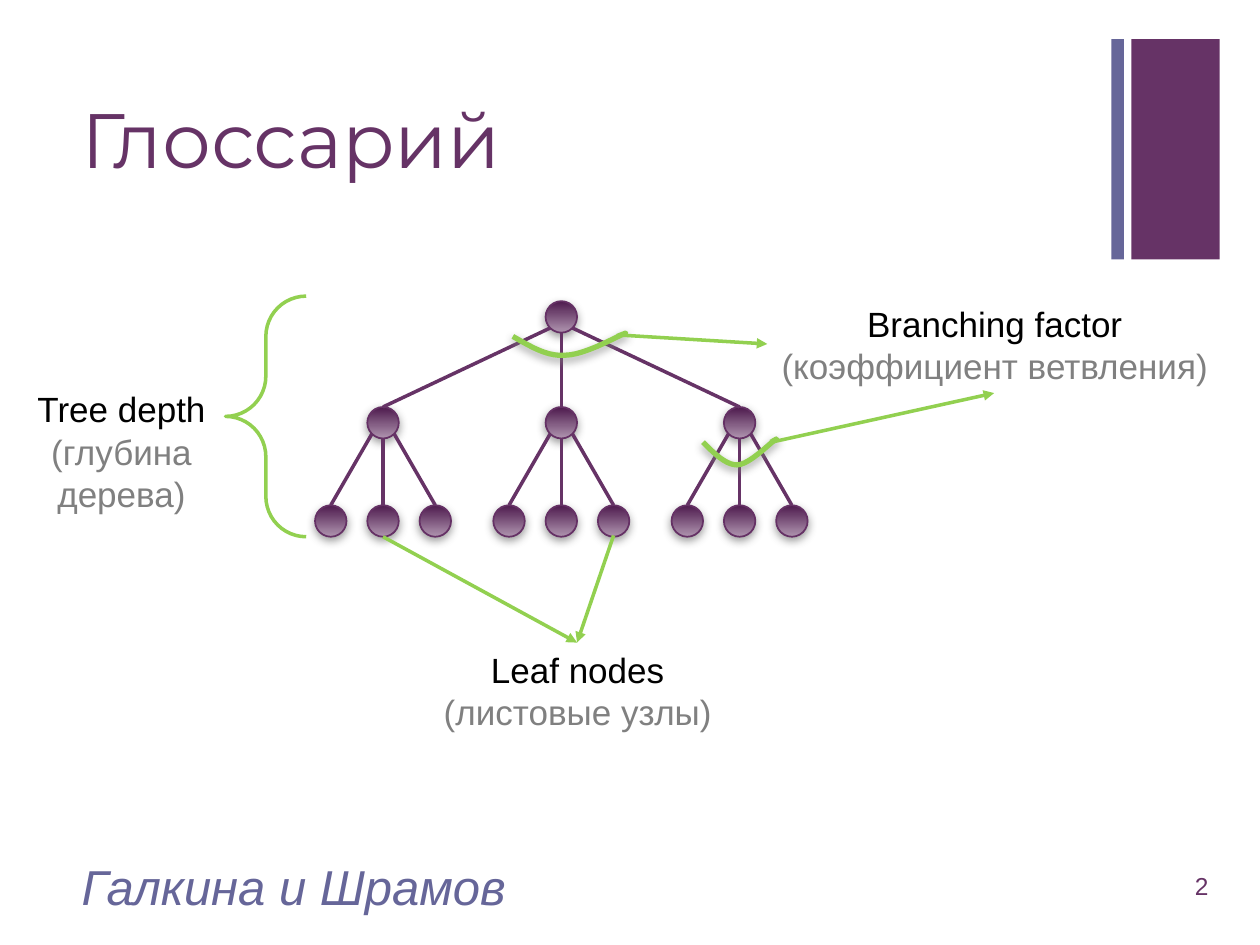
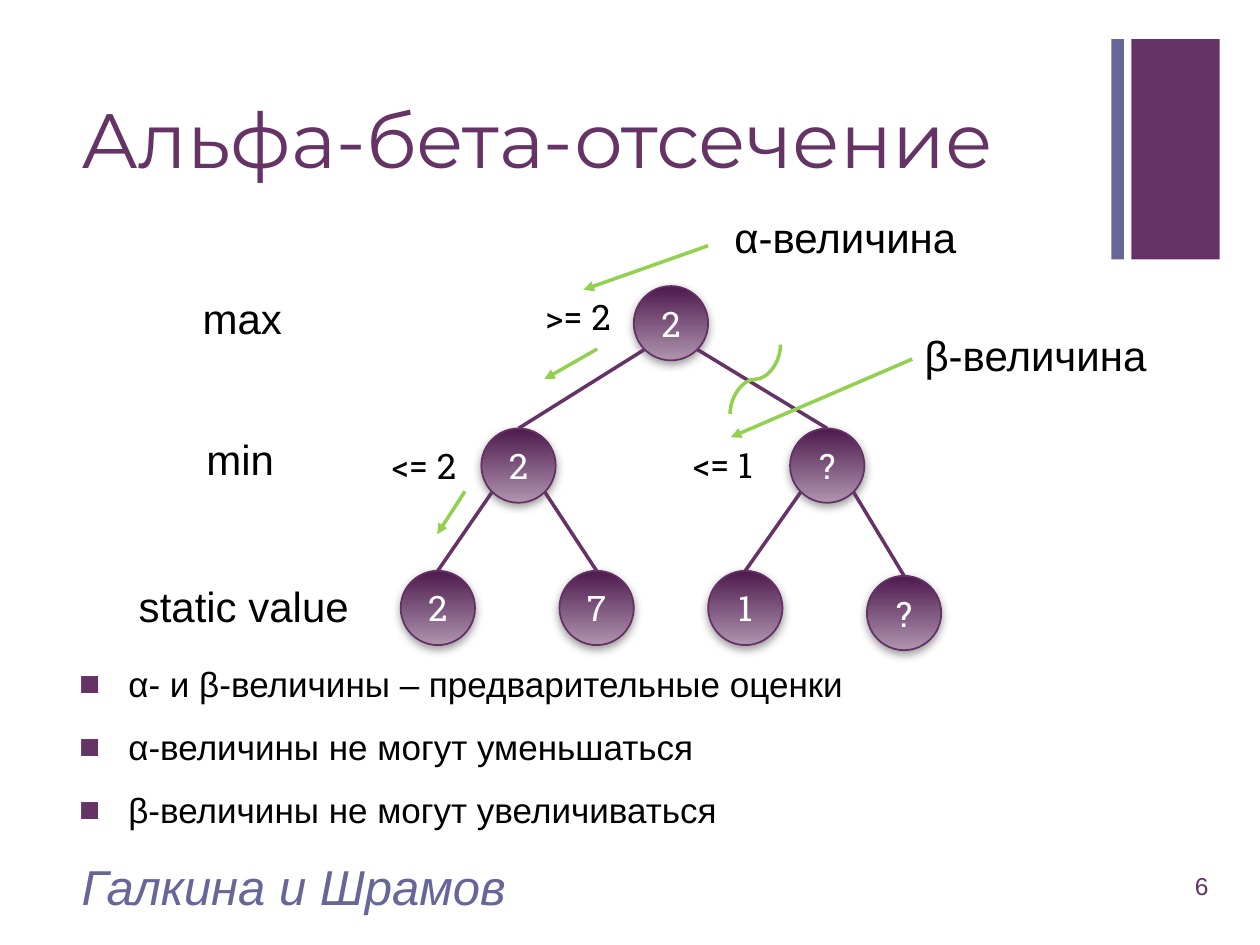
from math import sqrt
from lxml import etree
from pptx import Presentation
from pptx.dml import color
from pptx.enum import shapes, text
from pptx.oxml import ns
from pptx.util import Inches, Pt

PLUM, BLUE, GREEN, GRAY = "663366", "666699", "92D050", "808080"
BLACK, WHITE = "000000", "FFFFFF"
SANS, HEAD, SLAB = "Arial", "Montserrat", "Roboto Slab"
LEFT, MID, RIGHT = text.PP_ALIGN.LEFT, text.PP_ALIGN.CENTER, text.PP_ALIGN.RIGHT


def hue(code):
    return color.RGBColor.from_string(code)


def sub(parent, tag, **attrs):
    return etree.SubElement(parent, ns.qn(tag), attrs)


def span(*sizes):
    return [Inches(n) for n in sizes]


def shade(shape):
    shape.shadow.inherit = False
    effects = shape._element.spPr.find(ns.qn("a:effectLst"))
    drop = sub(effects, "a:outerShdw", blurRad=str(Pt(5)), dist=str(Pt(2)),
               dir="5400000", rotWithShape="0")
    sub(sub(drop, "a:srgbClr", val=GRAY), "a:alpha", val="75000")


def stroke(shape, code, width):
    shape.line.color.rgb = hue(code)
    shape.line.width = Pt(width)


def style(par, size, code, font=SANS, align=LEFT):
    par.alignment = align
    for run in par.runs:
        run.font.size = Pt(size)
        run.font.name = font
        run.font.color.rgb = hue(code)


def label(slide, box, words, size, code=BLACK, font=SANS, align=LEFT,
          wrap=False, middle=False):
    frame = slide.shapes.add_textbox(*span(*box)).text_frame
    frame.word_wrap = wrap
    if middle:
        frame.vertical_anchor = text.MSO_ANCHOR.MIDDLE
    frame.text = words
    for par in frame.paragraphs:
        style(par, size, code, font, align)
    return frame


def term(slide, box, words, wrap=False):
    frame = label(slide, box, words, 20, align=MID, wrap=wrap)
    style(frame.paragraphs[1], 20, GRAY, align=MID)


def link(slide, start, end, code=PLUM, head=False, kind="STRAIGHT"):
    line = slide.shapes.add_connector(
        shapes.MSO_CONNECTOR[kind], *span(*start, *end))
    stroke(line, code, 2)
    props = line._element.spPr
    if head:
        sub(props.find(ns.qn("a:ln")), "a:tailEnd", type="triangle")
    sub(props, "a:effectLst")
    return line


def arrow(slide, start, end):
    link(slide, start, end, GREEN, True)


def node(slide, x, y, size, words=""):
    ball = slide.shapes.add_shape(shapes.MSO_SHAPE.OVAL, *span(x, y, size, size))
    ball.fill.gradient()
    ball.fill.gradient_angle = 270
    for stop, code in zip(ball.fill.gradient_stops, ("4D1A4D", "AF94AF")):
        stop.color.rgb = hue(code)
    stroke(ball, "653165", 1)
    shade(ball)
    if words:
        frame = ball.text_frame
        frame.word_wrap = False
        frame.vertical_anchor = text.MSO_ANCHOR.MIDDLE
        frame.text = words
        style(frame.paragraphs[0], 20, WHITE, SLAB, MID)
    return x + size / 2, y + size / 2, size / 2


def edge(slide, top, low):
    x, y, r = top
    side = (low[0] > x + 0.01) - (low[0] < x - 0.01)
    slant = r / sqrt(2)
    start = (x + side * slant, y + (slant if side else r))
    link(slide, start, (low[0], low[1] - low[2]))


def curve(points, steps=10):
    result = [points[0]]
    for i in range(0, len(points) - 1, 3):
        a, b, c, d = points[i:i + 4]
        for k in range(1, steps + 1):
            t = k / steps
            u = 1 - t
            result.append(tuple(
                u**3 * p + 3 * u * u * t * q + 3 * u * t * t * r + t**3 * s
                for p, q, r, s in zip(a, b, c, d)))
    return result


def arc(slide, x, y, points):
    dots = [(Inches(x + a), Inches(y + b)) for a, b in curve(points)]
    pen = slide.shapes.build_freeform(*dots[0])
    pen.add_line_segments(dots[1:], close=False)
    bow = pen.convert_to_shape()
    bow.fill.background()
    stroke(bow, GREEN, 3)
    shade(bow)


def base(deck, title, number):
    slide = deck.slides.add_slide(deck.slide_layouts[6])
    for x, width, code in ((8.98, 0.7, PLUM), (8.82, 0.1, BLUE)):
        band = slide.shapes.add_shape(
            shapes.MSO_SHAPE.RECTANGLE, *span(x, 0.31, width, 1.75))
        band.fill.solid()
        band.fill.fore_color.rgb = hue(code)
        band.line.fill.background()
        band.shadow.inherit = False
    frame = label(slide, (0.55, 0.53, 8.26, 1.22), title, 44, PLUM, HEAD,
                  wrap=True, middle=True)
    frame.paragraphs[0].line_spacing = 0.9
    label(slide, (9.08, 6.83, 0.61, 0.4), str(number), 14, PLUM,
          align=RIGHT, wrap=True, middle=True)
    foot = label(slide, (0.55, 6.83, 6.7, 0.4), "Галкина и Шрамов", 28, BLUE,
                 wrap=True, middle=True)
    foot.paragraphs[0].runs[0].font.italic = True
    return slide


def wide_tree(slide, x, y):
    size, gap, step = 0.25, 1.415, 0.415
    root = node(slide, x + step + gap, y, size)
    pairs = []
    for i in range(3):
        left = x + step + i * gap
        child = node(slide, left, y + 0.84, size)
        pairs.append((root, child))
        for k in (-1, 0, 1):
            pairs.append((child, node(slide, left + k * step, y + 1.62, size)))
    for top, low in pairs:
        edge(slide, top, low)
    arc(slide, x + 1.57, y + 0.26, [
        (0, 0.02), (0.14, 0.1), (0.27, 0.18), (0.41, 0.17), (0.56, 0.17),
        (0.79, 0.04), (0.86, 0.01), (0.93, -0.02), (0.88, 0), (0.83, 0.02)])
    arc(slide, x + 3.08, y + 1.09, [
        (0, 0.03), (0.09, 0.12), (0.18, 0.21), (0.27, 0.21), (0.36, 0.21),
        (0.52, 0.05), (0.56, 0.02), (0.61, -0.01), (0.57, 0.01), (0.54, 0.03)])


def terms(slide, x, y):
    term(slide, (x + 6.01, y, 3.61, 0.77),
         "Branching factor\n(коэффициент ветвления)")
    term(slide, (x, y + 0.68, 1.77, 1.11), "Tree depth\n(глубина дерева)", True)
    term(slide, (x + 3.33, y + 2.75, 2.35, 0.77), "Leaf nodes\n(листовые узлы)")
    brace = slide.shapes.add_shape(
        shapes.MSO_SHAPE.LEFT_BRACE, *span(x + 1.71, y, 0.64, 1.91))
    brace.adjustments[0], brace.adjustments[1] = 0.5, 0.5
    brace.fill.background()
    brace.shadow.inherit = False
    stroke(brace, GREEN, 2)
    for a, b, c, d in ((4.85, 0.31, 6.01, 0.38), (6.04, 1.16, 7.81, 0.77),
                       (2.96, 1.91, 4.5, 2.75), (4.79, 1.9, 4.5, 2.75)):
        arrow(slide, (x + a, y + b), (x + c, y + d))


def game_tree(slide, x, y):
    spots = ((1.85, 0, "2"), (0.64, 1.13, "2"), (3.09, 1.13, "?"),
             (0, 2.26, "2"), (1.26, 2.26, "7"), (2.44, 2.26, "1"),
             (3.7, 2.3, "?"))
    nodes = [node(slide, x + a, y + b, 0.59, words) for a, b, words in spots]
    for i in range(1, len(nodes)):
        edge(slide, nodes[(i - 1) // 2], nodes[i])
    for a, b, words in ((-0.17, 1.21, "<= 2"), (1.05, 0.03, ">= 2"),
                        (2.22, 1.2, "<= 1")):
        label(slide, (x + a, y + b, 0.8, 0.44), words, 20, font=SLAB)
    for a, b, c, d in ((1.56, 0.5, 1.14, 0.74), (0.51, 1.63, 0.29, 1.97),
                       (2.44, -0.32, 1.45, 0.03), (4.06, 0.58, 2.62, 1.2)):
        arrow(slide, (x + a, y + b), (x + c, y + d))
    cut = link(slide, (x + 3.09, y + 0.94), (x + 2.54, y + 0.54), GREEN,
               kind="CURVE")
    cut._element.spPr.find(ns.qn("a:xfrm")).set("rot", "5400000")


def levels(slide, x, y):
    for a, b, width, words in (
            (0.7, 0.64, 0.86, "max"), (0.73, 1.76, 0.74, "min"),
            (6.43, 0.94, 1.97, "β-величина"), (4.92, 0, 1.98, "α-величина")):
        label(slide, (x + a, y + b, width, 0.5), words, 24)
    label(slide, (x, y + 2.93, 2.25, 0.5), "static value", 24, align=MID, wrap=True)


def notes(slide, box):
    frame = label(slide, box, "\n".join((
        "α- и β-величины – предварительные оценки",
        "α-величины не могут уменьшаться",
        "β-величины не могут увеличиваться")), 20, wrap=True)
    for par in frame.paragraphs:
        par.space_before = Pt(12)
        props = par._p.get_or_add_pPr()
        props.set("marL", str(Inches(0.39)))
        props.set("indent", str(-Inches(0.39)))
        sub(sub(props, "a:buClr"), "a:srgbClr", val=PLUM)
        sub(props, "a:buFont", typeface=SANS)
        sub(props, "a:buChar", char="■")


def main():
    deck = Presentation()
    deck.slide_width, deck.slide_height = span(10, 7.5)
    slide = base(deck, "Глоссарий", 2)
    wide_tree(slide, 2.5, 2.39)
    terms(slide, 0.08, 2.35)
    slide = base(deck, "Альфа-бета-отсечение", 6)
    game_tree(slide, 3.18, 2.27)
    levels(slide, 0.81, 1.63)
    notes(slide, (0.53, 5.21, 8.85, 1.12))
    deck.save("out.pptx")


if __name__ == "__main__":
    main()
